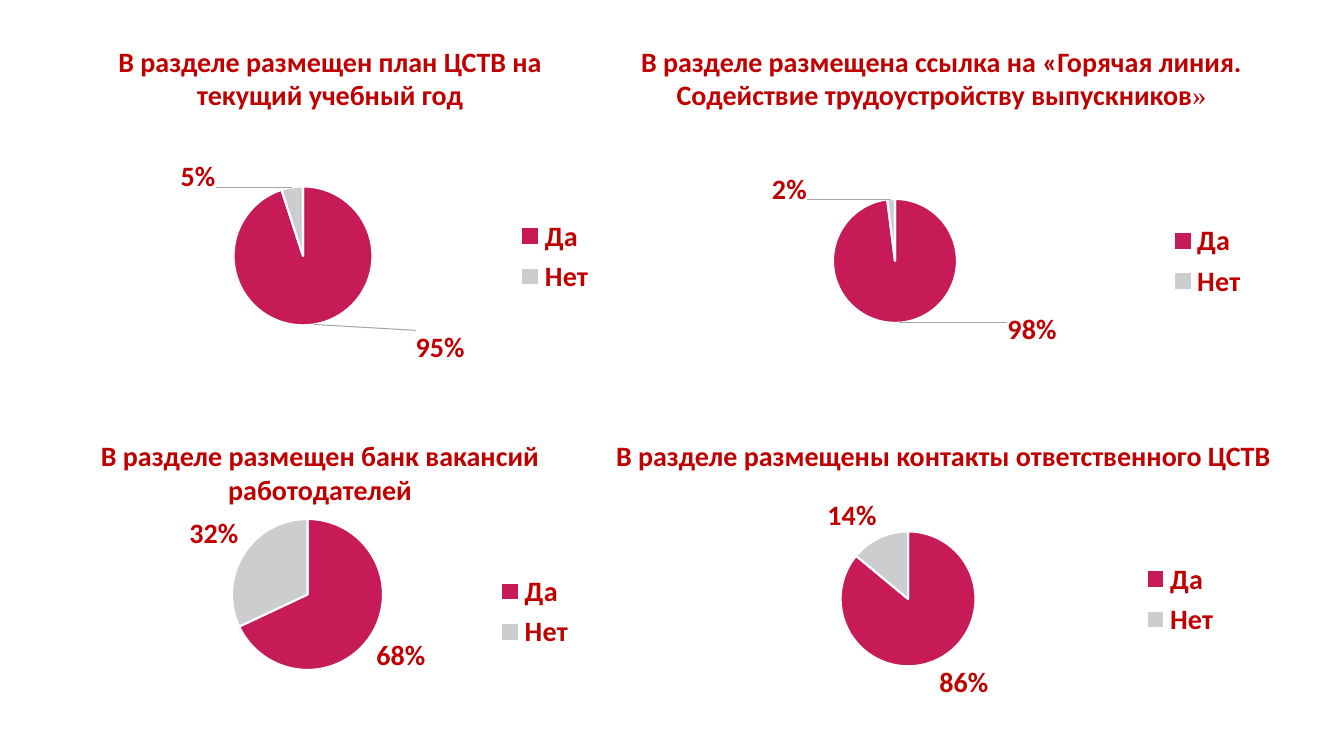
from dataclasses import dataclass

from lxml.etree import _Element
from pptx import Presentation
from pptx.chart.chart import Chart
from pptx.chart.data import CategoryChartData
from pptx.dml.color import RGBColor
from pptx.enum.chart import XL_CHART_TYPE, XL_LABEL_POSITION, XL_LEGEND_POSITION
from pptx.enum.text import MSO_AUTO_SIZE, PP_ALIGN
from pptx.oxml import parse_xml
from pptx.oxml.ns import nsdecls
from pptx.slide import Slide
from pptx.text.text import Font
from pptx.util import Pt


@dataclass(frozen=True)
class Theme:
    red: RGBColor = RGBColor(0xC0, 0x00, 0x00)
    yes: RGBColor = RGBColor(0xC7, 0x1B, 0x58)
    no: RGBColor = RGBColor(0xCC, 0xCD, 0xCE)
    edge: RGBColor = RGBColor(0xFF, 0xFF, 0xFF)
    lead: str = "A6A6A6"
    face: str = "Calibri"
    serif: str = "Times New Roman"
    size: float = 20
    border: float = 1.5


@dataclass(frozen=True)
class Box:
    left: float
    top: float
    width: float
    height: float

    def points(self) -> tuple[Pt, Pt, Pt, Pt]:
        return Pt(self.left), Pt(self.top), Pt(self.width), Pt(self.height)


@dataclass(frozen=True)
class Panel:
    """One question: its heading, its chart frame and the pie circle on the slide.

    Shifts move the two value labels, as shares of the frame.
    """
    title: str
    head: Box
    frame: Box
    pie: Box
    yes: float
    shifts: tuple[tuple[float, float], ...] = ()
    tail: str = ""


THEME = Theme()
PANELS = (
    Panel("В разделе размещен план ЦСТВ на текущий учебный год",
          Box(49, 28, 373.7, 55.7), Box(72.7, 95, 360, 176.4),
          Box(166.8, 133.2, 99.3, 99.3), 0.95, ((0.2, 0), (-0.15, 0.05))),
    Panel("В разделе размещена ссылка на «Горячая линия. "
          "Содействие трудоустройству выпускников",
          Box(446.4, 28, 452.2, 55.7), Box(446.4, 103, 452.2, 167),
          Box(595, 142.1, 88.6, 88.6), 0.98, ((0.21, -0.07), (-0.16, 0.06)), "»"),
    Panel("В разделе размещен банк вакансий работодателей",
          Box(61.9, 309.6, 333.4, 55.7), Box(72.7, 349.9, 345.6, 174.2),
          Box(165.7, 370.7, 107.9, 107.9), 0.68),
    Panel("В разделе размещены контакты ответственного ЦСТВ",
          Box(432.7, 309.6, 482.4, 31.5), Box(484.6, 344.2, 394.6, 167.8),
          Box(600.4, 379.6, 96.4, 96.4), 0.86),
)


def style(font: Font) -> None:
    font.name = THEME.face
    font.size = Pt(THEME.size)
    font.bold = True
    font.color.rgb = THEME.red


def layout(head: str, **sides: float) -> _Element:
    """Build a manual chart layout from shares of the chart frame."""
    parts = "".join(f'<c:{key} val="{val:.4f}"/>' for key, val in sides.items())
    return parse_xml(f'<c:layout {nsdecls("c")}><c:manualLayout>{head}{parts}'
                     '</c:manualLayout></c:layout>')


def place_pie(chart: Chart, panel: Panel) -> None:
    area = chart.element.xpath(".//c:plotArea")[0]
    for old in area.xpath("./c:layout"):
        area.remove(old)
    head = ('<c:layoutTarget val="inner"/><c:xMode val="edge"/>'
            '<c:yMode val="edge"/>')
    pie, frame = panel.pie, panel.frame
    area.insert(0, layout(head, x=(pie.left - frame.left) / frame.width,
                          y=(pie.top - frame.top) / frame.height,
                          w=pie.width / frame.width, h=pie.height / frame.height))


def add_leads(chart: Chart) -> None:
    """Turn on thin leader lines from slices to moved labels."""
    group = chart.element.xpath(".//c:ser/c:dLbls")[0]
    for old in group.xpath("./c:showLeaderLines | ./c:leaderLines"):
        group.remove(old)
    group.append(parse_xml(f'<c:showLeaderLines {nsdecls("c")} val="1"/>'))
    group.append(parse_xml(
        f'<c:leaderLines {nsdecls("c", "a")}><c:spPr><a:ln w="9525"><a:solidFill>'
        f'<a:srgbClr val="{THEME.lead}"/></a:solidFill></a:ln></c:spPr>'
        '</c:leaderLines>'))


def add_pie(slide: Slide, panel: Panel) -> None:
    data = CategoryChartData(number_format="0%")
    data.categories = ("Да", "Нет")
    data.add_series("Series 1", (panel.yes, round(1 - panel.yes, 2)))
    chart = slide.shapes.add_chart(XL_CHART_TYPE.PIE, *panel.frame.points(), data).chart
    chart.has_title = False
    style(chart.font)
    chart.has_legend = True
    chart.legend.position = XL_LEGEND_POSITION.RIGHT
    chart.legend.include_in_layout = False
    style(chart.legend.font)
    chart.plots[0].vary_by_categories = True

    series = chart.plots[0].series[0]
    for i, color in enumerate((THEME.yes, THEME.no)):
        form = series.points[i].format
        form.fill.solid()
        form.fill.fore_color.rgb = color
        form.line.color.rgb = THEME.edge
        form.line.width = Pt(THEME.border)

    labels = series.data_labels
    labels.show_value = True
    labels.number_format = "0%"
    labels.number_format_is_linked = False
    labels.position = XL_LABEL_POSITION.OUTSIDE_END
    style(labels.font)
    for i, (x, y) in enumerate(panel.shifts):
        label = series.points[i].data_label
        label.position = XL_LABEL_POSITION.OUTSIDE_END
        style(label.font)
        item = chart.element.xpath(".//c:ser/c:dLbls/c:dLbl")[i]
        item.insert(1, layout("", x=x, y=y))
    add_leads(chart)
    place_pie(chart, panel)


def add_head(slide: Slide, panel: Panel) -> None:
    frame = slide.shapes.add_textbox(*panel.head.points()).text_frame
    frame.word_wrap = True
    frame.auto_size = MSO_AUTO_SIZE.SHAPE_TO_FIT_TEXT
    para = frame.paragraphs[0]
    para.alignment = PP_ALIGN.CENTER
    style(para.font)
    runs = [para.add_run()]
    runs[0].text = panel.title
    if panel.tail:
        runs.append(para.add_run())
        runs[1].text = panel.tail
    for run in runs:
        style(run.font)
    if panel.tail:
        runs[1].font.name = THEME.serif
        runs[1].font.bold = False


def main() -> None:
    deck = Presentation()
    deck.slide_width, deck.slide_height = Pt(960), Pt(540)
    slide = deck.slides.add_slide(deck.slide_layouts[6])
    for panel in PANELS:
        add_pie(slide, panel)
        add_head(slide, panel)
    deck.save("out.pptx")


if __name__ == "__main__":
    main()
